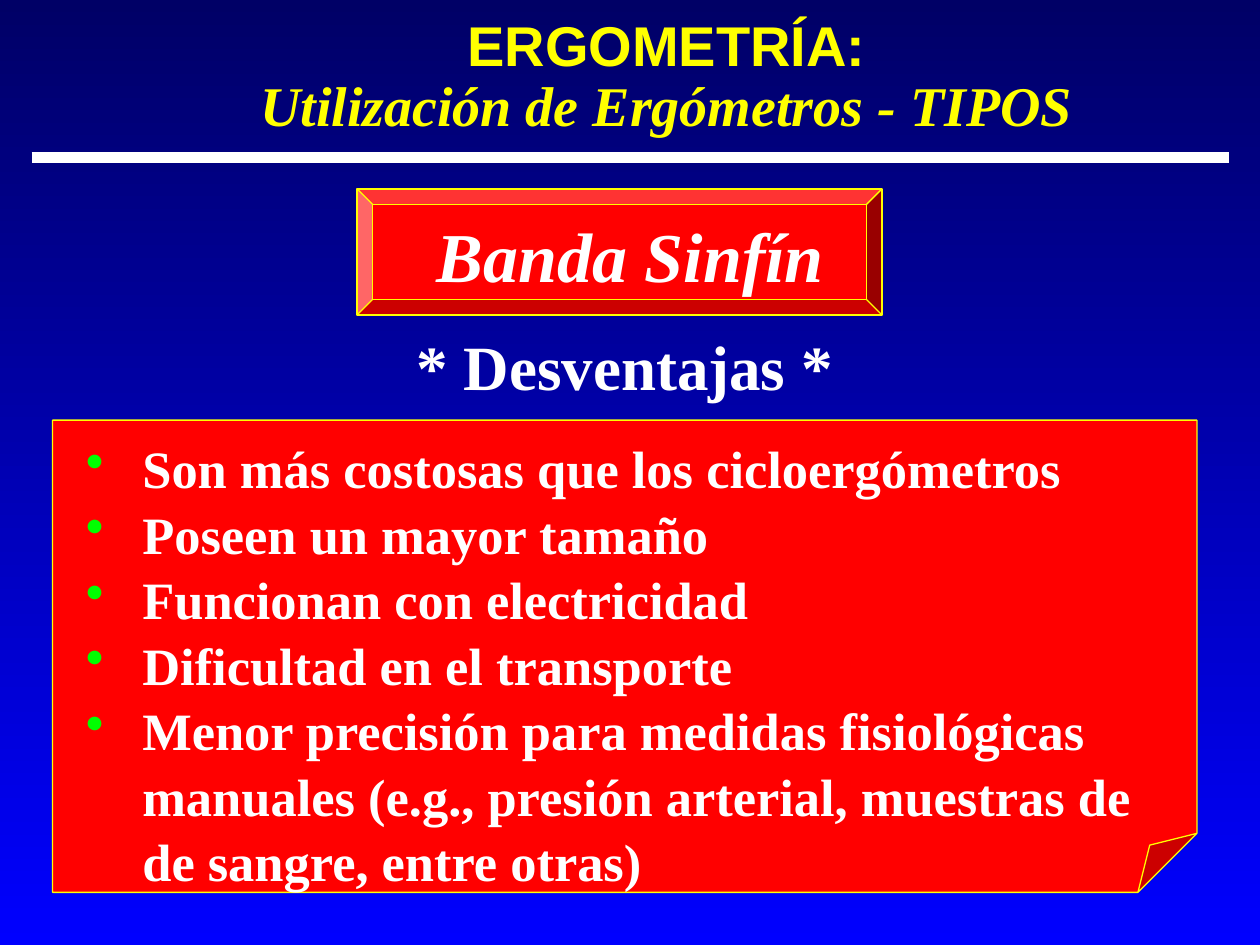
from pptx import Presentation
from pptx.dml.color import RGBColor
from pptx.enum.shapes import MSO_CONNECTOR, MSO_SHAPE
from pptx.enum.text import MSO_ANCHOR, PP_ALIGN
from pptx.oxml import parse_xml
from pptx.oxml.ns import nsdecls
from pptx.util import Cm, Pt

SERIF = "Times New Roman"
WHITE, YELLOW, RED, GREEN = "FFFFFF", "FFFF00", "FF0000", "00FF00"
DISADVANTAGES = [
    "Son más costosas que los cicloergómetros",
    "Poseen un mayor tamaño",
    "Funcionan con electricidad",
    "Dificultad en el transporte",
    "Menor precisión para medidas fisiológicas\v"
    "manuales (e.g., presión arterial, muestras de\vde sangre, entre otras)",
]


def colour(value):
    return RGBColor.from_string(value)


def place(box):
    return [Cm(length) for length in box]


def drawing_element(tag, content=""):
    return parse_xml(f"<a:{tag} {nsdecls('a')}>{content}</a:{tag}>")


def style_runs(para, size, text_colour=WHITE, font=SERIF, italic=False):
    for span in para.runs:
        span.font.name = font
        span.font.size = Pt(size)
        span.font.bold = True
        span.font.italic = italic
        span.font.color.rgb = colour(text_colour)


def add_text(page, box, text, top_inset=0.13):
    frame = page.shapes.add_textbox(*place(box)).text_frame
    frame.word_wrap = True
    frame.margin_top = Cm(top_inset)
    frame.text = text
    return frame


def add_red_panel(page, box, kind):
    panel = page.shapes.add_shape(kind, *place(box))
    panel.shadow.inherit = False
    panel.fill.solid()
    panel.fill.fore_color.rgb = colour(RED)
    panel.line.color.rgb = colour(YELLOW)
    panel.line.width = Pt(0.75)
    return panel


def paint_background(page):
    fill = page.background.fill
    fill.gradient()
    fill.gradient_angle = 270
    for stop, value in zip(fill.gradient_stops, ("000066", "0000FF")):
        stop.color.rgb = colour(value)


def add_title(page, box):
    frame = add_text(page, box, "ERGOMETRÍA:\vUtilización de Ergómetros - TIPOS")
    frame.vertical_anchor = MSO_ANCHOR.MIDDLE
    para = frame.paragraphs[0]
    para.alignment = PP_ALIGN.CENTER
    para.line_spacing = 0.9
    style_runs(para, 32, YELLOW)
    heading, subtitle = para.runs
    heading.font.name = "Arial"
    subtitle.font.italic = True


def add_rule(page, left, top, width):
    rule = page.shapes.add_connector(
        MSO_CONNECTOR.STRAIGHT, Cm(left), Cm(top), Cm(left + width), Cm(top))
    rule.line.color.rgb = colour(WHITE)
    rule.line.width = Pt(6)
    rule._element.spPr.append(drawing_element("effectLst"))


def add_banner(page, box):
    left, top, width, height = box
    add_red_panel(page, box, MSO_SHAPE.BEVEL)
    frame = add_text(page, (left - 0.2, top + 0.64, width + 0.83, height - 0.64),
                     "Banda Sinfín", 0.29)
    para = frame.paragraphs[0]
    para.alignment = PP_ALIGN.CENTER
    para.line_spacing = 0.7
    style_runs(para, 40, italic=True)
    shadow = drawing_element(
        "effectLst",
        '<a:outerShdw dist="35921" dir="2700000"><a:srgbClr val="808080"/></a:outerShdw>')
    para.runs[0]._r.rPr.find("{*}solidFill").addnext(shadow)


def add_section_heading(page, box):
    para = add_text(page, box, "* Desventajas *").paragraphs[0]
    para.alignment = PP_ALIGN.RIGHT
    style_runs(para, 36)


def add_bullet(para, indent):
    properties = para._p.get_or_add_pPr()
    properties.set("marL", str(Cm(indent)))
    properties.set("indent", str(-Cm(indent)))
    properties.append(drawing_element("buClr", f'<a:srgbClr val="{GREEN}"/>'))
    bullet = drawing_element("buChar")
    bullet.set("char", "•")
    properties.append(bullet)


def add_disadvantages(page, box):
    left, top, width, height = box
    panel = add_red_panel(page, box, MSO_SHAPE.FOLDED_CORNER)
    fold = drawing_element("gd")
    fold.set("name", "adj")
    fold.set("fmla", "val 12500")
    panel._element.spPr.find("{*}prstGeom").find("{*}avLst").append(fold)
    frame = add_text(page, (left + 0.42, top, width - 1.27, height + 1.2),
                     "\n".join(DISADVANTAGES), 0.28)
    for para in frame.paragraphs:
        para.line_spacing = 1.04
        add_bullet(para, 1.14)
        style_runs(para, 30)


def main():
    deck = Presentation()
    deck.slide_width, deck.slide_height = Cm(25.4), Cm(19.05)
    page = deck.slides.add_slide(deck.slide_layouts[6])
    paint_background(page)
    add_title(page, (4.45, 0.84, 17.98, 1.47))
    add_rule(page, 0.64, 3.18, 24.13)
    add_banner(page, (7.2, 3.81, 10.58, 2.54))
    add_section_heading(page, (7.82, 6.48, 9.22, 1.78))
    add_disadvantages(page, (1.06, 8.47, 23.07, 9.52))
    deck.save("out.pptx")


if __name__ == "__main__":
    main()
